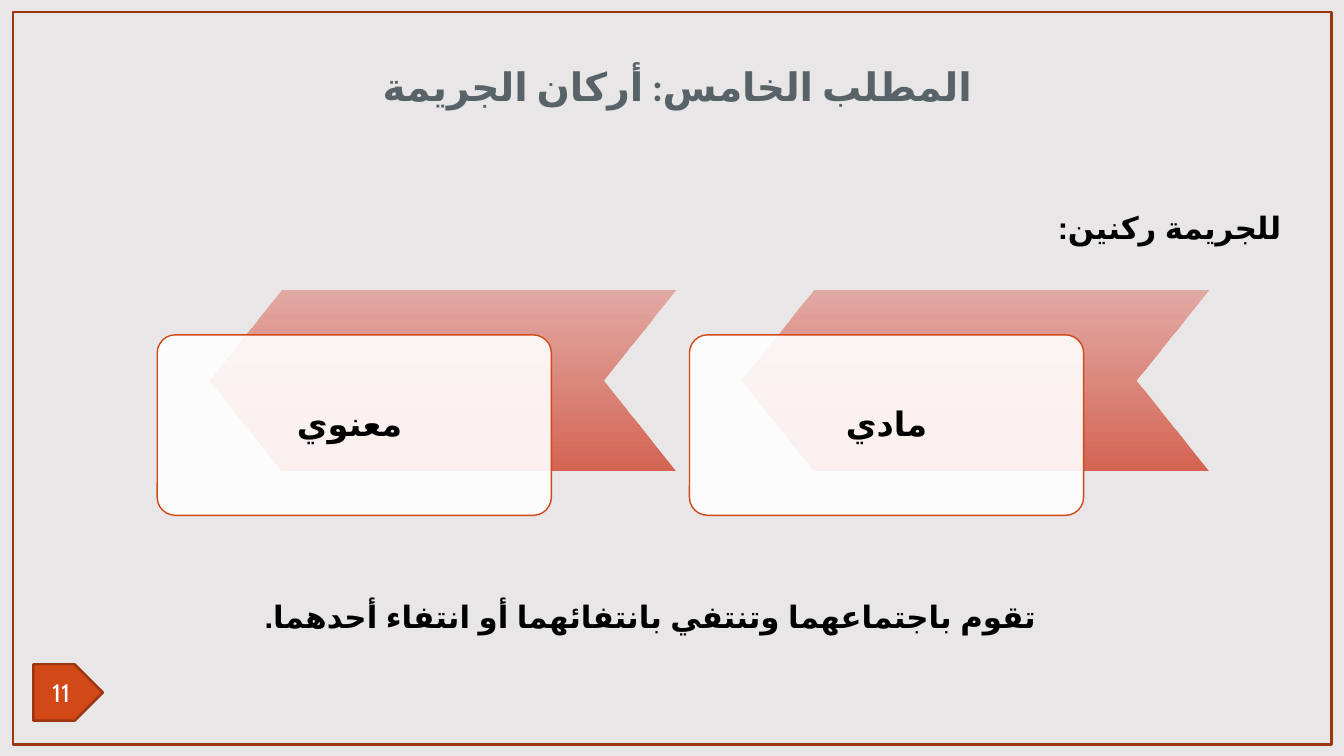
from lxml import etree
from pptx import Presentation
from pptx.dml.color import RGBColor
from pptx.enum.lang import MSO_LANGUAGE_ID
from pptx.enum.shapes import MSO_SHAPE
from pptx.enum.text import MSO_ANCHOR, PP_ALIGN
from pptx.oxml import parse_xml
from pptx.oxml.ns import nsdecls, qn
from pptx.util import Pt

ARABIC = MSO_LANGUAGE_ID.ARABIC
RECTANGLE = MSO_SHAPE.RECTANGLE
PENTAGON = MSO_SHAPE.PENTAGON
CHEVRON = MSO_SHAPE.CHEVRON
ROUNDED = MSO_SHAPE.ROUNDED_RECTANGLE
TOP, MIDDLE = MSO_ANCHOR.TOP, MSO_ANCHOR.MIDDLE
CENTER, RIGHT = PP_ALIGN.CENTER, PP_ALIGN.RIGHT

BACKGROUND = RGBColor(0xE9, 0xE6, 0xE7)
ORANGE = RGBColor(0xD3, 0x48, 0x17)
BROWN = RGBColor(0x9C, 0x35, 0x11)
SLATE = RGBColor(0x57, 0x63, 0x68)
PINK = RGBColor(0xE2, 0xA3, 0x9C)
RED = RGBColor(0xD5, 0x64, 0x53)
WHITE = RGBColor(0xFF, 0xFF, 0xFF)
BLACK = RGBColor(0, 0, 0)


def add_panel(slide, kind, box, fill=None, line=None, width=1.75):
    """Add a preset shape with an optional solid fill and outline."""
    shape = slide.shapes.add_shape(kind, *map(Pt, box))
    shape.shadow.inherit = False
    if fill is None:
        shape.fill.background()
    else:
        shape.fill.solid()
        shape.fill.fore_color.rgb = fill
    if line is None:
        shape.line.fill.background()
    else:
        shape.line.color.rgb = line
        shape.line.width = Pt(width)
    return shape


def write_text(shape, text, size, color, font="Arial", align=CENTER, anchor=MIDDLE,
               spacing=1.0, bold=True, rtl=True, inset=None):
    """Write one styled paragraph into a shape."""
    frame = shape.text_frame
    frame.word_wrap = True
    frame.vertical_anchor = anchor
    if inset is not None:
        frame.margin_left = frame.margin_right = Pt(inset)
        frame.margin_top = frame.margin_bottom = Pt(inset)
    paragraph = frame.paragraphs[0]
    paragraph.alignment = align
    paragraph.line_spacing = spacing
    if rtl:
        paragraph._p.get_or_add_pPr().set("rtl", "1")
    run = paragraph.add_run()
    run.text = text
    run.font.size = Pt(size)
    run.font.bold = bold
    run.font.name = font
    run.font.color.rgb = color
    run.font.language_id = ARABIC
    etree.SubElement(run._r.get_or_add_rPr(), qn("a:cs")).set("typeface", font)


def add_text(slide, box, text, size, color, **style):
    """Add a text box holding one paragraph."""
    write_text(slide.shapes.add_textbox(*map(Pt, box)), text, size, color, **style)


def set_gradient(shape, start, end):
    """Fill a shape with a downward gradient that ignores its rotation."""
    properties = shape._element.spPr
    gradient = parse_xml(
        f'<a:gradFill {nsdecls("a")} rotWithShape="0"><a:gsLst>'
        f'<a:gs pos="0"><a:srgbClr val="{start}"><a:alpha val="90000"/></a:srgbClr></a:gs>'
        f'<a:gs pos="100000"><a:srgbClr val="{end}"/></a:gs>'
        '</a:gsLst><a:lin ang="5400000" scaled="0"/></a:gradFill>')
    properties.replace(properties.find(qn("a:noFill")), gradient)


def add_pillar(slide, left, label):
    """Add a left-pointing chevron with a translucent label card over it."""
    chevron = add_panel(slide, CHEVRON, (left + 37, 207.4, 333.4, 128.9))
    chevron.adjustments[0] = 0.4
    chevron.rotation = 180
    set_gradient(chevron, PINK, RED)
    card = add_panel(slide, ROUNDED, (left, 239.2, 281.5, 128.9), WHITE, ORANGE, 1)
    card.adjustments[0] = 0.1
    color = card._element.spPr.find(qn("a:solidFill"))[0]
    etree.SubElement(color, qn("a:alpha")).set("val", "90000")
    add_text(slide, (left + 4, 243.4, 273.6, 121), label, 24, BLACK,
             spacing=0.9, rtl=False, inset=13.7)


def main():
    """Build the slide and save it."""
    presentation = Presentation()
    presentation.slide_width, presentation.slide_height = Pt(960), Pt(540)
    slide = presentation.slides.add_slide(presentation.slide_layouts[6])
    slide.background.fill.solid()
    slide.background.fill.fore_color.rgb = BACKGROUND

    add_panel(slide, RECTANGLE, (9.2, 8.6, 941.8, 523.4), line=BROWN)
    badge = add_panel(slide, PENTAGON, (23.8, 474.5, 49.7, 40.3), ORANGE, BROWN)
    write_text(badge, "11", 18, WHITE, font="Cabin", bold=False, rtl=False, inset=0)

    add_text(slide, (213.1, 22.3, 541.4, 74.2), "المطلب الخامس: أركان الجريمة",
             28, SLATE, font="Calibri", spacing=1.1)
    add_text(slide, (7.2, 132.5, 915.1, 48), "للجريمة ركنين:", 22, BLACK,
             align=RIGHT, anchor=TOP, spacing=1.5)
    for left, label in ((492.5, "مادي"), (112.3, "معنوي ")):
        add_pillar(slide, left, label)
    add_text(slide, (7.2, 410, 915.1, 48), "تقوم باجتماعهما وتنتفي بانتفائهما أو انتفاء أحدهما.",
             22, BLACK, anchor=TOP, spacing=1.5)
    presentation.save("out.pptx")


if __name__ == "__main__":
    main()
